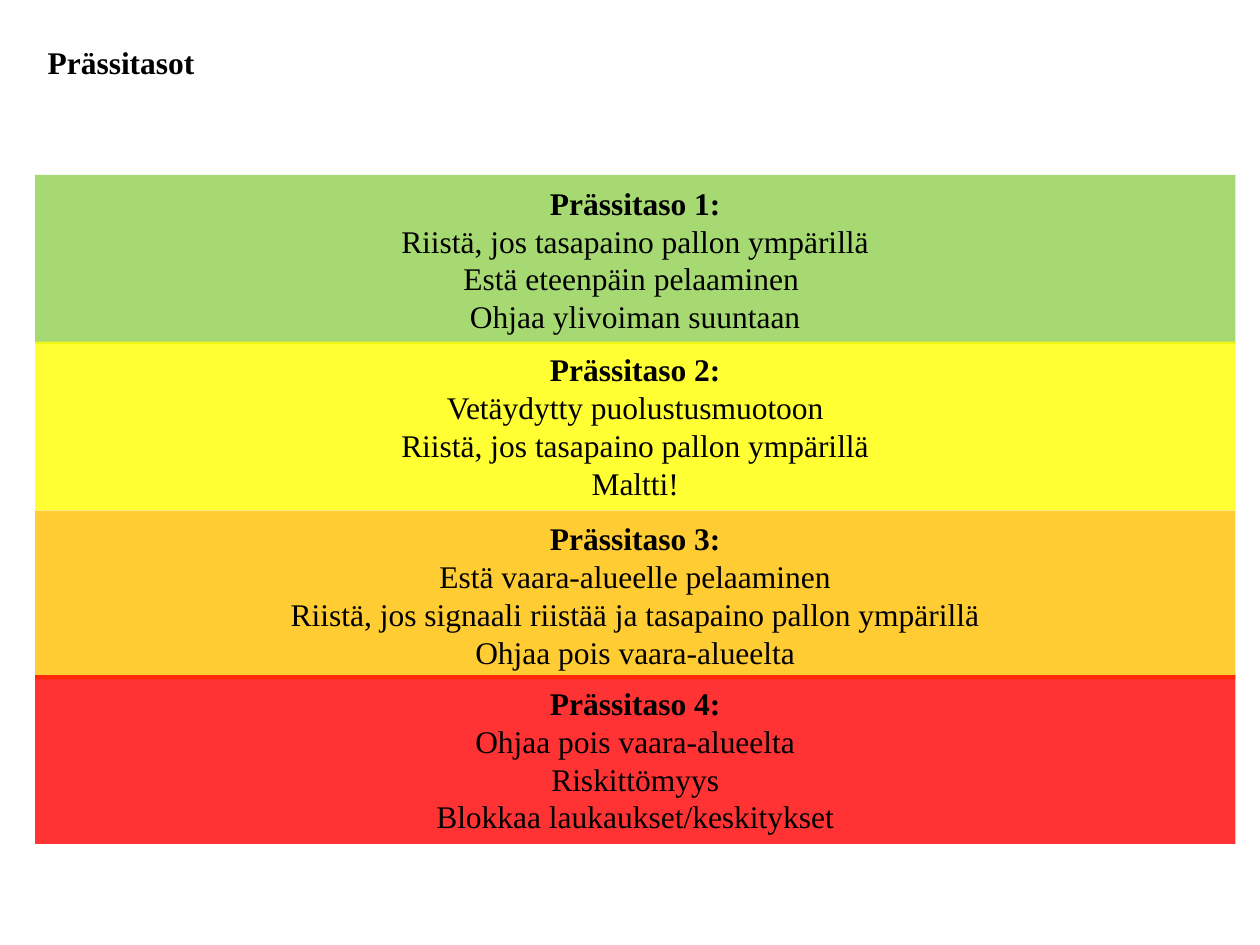
"""Build the slide of the four pressing levels."""
from dataclasses import dataclass

from lxml.etree import SubElement
from pptx import Presentation
from pptx.dml.color import RGBColor
from pptx.enum.shapes import MSO_SHAPE
from pptx.enum.text import MSO_ANCHOR, PP_ALIGN
from pptx.oxml.ns import qn
from pptx.slide import Slide
from pptx.text.text import TextFrame
from pptx.util import Pt

GREEN = RGBColor(0x92, 0xD0, 0x50)
YELLOW = RGBColor(0xFF, 0xFF, 0x00)
ORANGE = RGBColor(0xFF, 0xC0, 0x00)
RED = RGBColor(0xFF, 0x00, 0x00)
BLACK = RGBColor(0x00, 0x00, 0x00)

FONT = "Times New Roman"
LEFT = 20
BAND_WIDTH = 686
BAND_HEIGHT = 96.5
OPACITY = 80


@dataclass(frozen=True)
class Level:
    top: float
    color: RGBColor
    heading: str
    instructions: tuple[str, ...]


LEVELS = (
    Level(100, GREEN, "Prässitaso 1:", (
        "Riistä, jos tasapaino pallon ympärillä",
        "Estä eteenpäin pelaaminen ",
        "Ohjaa ylivoiman suuntaan",
    )),
    Level(195.2, YELLOW, "Prässitaso 2:", (
        "Vetäydytty puolustusmuotoon",
        "Riistä, jos tasapaino pallon ympärillä",
        "Maltti!",
    )),
    Level(291.8, ORANGE, "Prässitaso 3:", (
        "Estä vaara-alueelle pelaaminen",
        "Riistä, jos signaali riistää ja tasapaino pallon ympärillä",
        "Ohjaa pois vaara-alueelta",
    )),
    Level(385.8, RED, "Prässitaso 4:", (
        "Ohjaa pois vaara-alueelta",
        "Riskittömyys",
        "Blokkaa laukaukset/keskitykset",
    )),
)


def write_lines(frame: TextFrame, lines: tuple[str, ...], *,
                align: PP_ALIGN, anchor: MSO_ANCHOR, size: float = 18) -> None:
    """Write lines into a frame, the first one in bold."""
    frame.word_wrap = True
    frame.vertical_anchor = anchor
    for index, line in enumerate(lines):
        paragraph = frame.paragraphs[0] if index == 0 else frame.add_paragraph()
        paragraph.alignment = align
        paragraph.line_spacing = 1.0
        paragraph.space_before = Pt(0)
        run = paragraph.add_run()
        run.text = line
        run.font.name = FONT
        run.font.size = Pt(size)
        run.font.bold = index == 0
        run.font.color.rgb = BLACK


def add_title(slide: Slide, text: str) -> None:
    """Place the slide title in the top left corner."""
    title = slide.shapes.title
    title.left, title.top = Pt(LEFT), Pt(21)
    title.width, title.height = Pt(193), Pt(29)
    write_lines(title.text_frame, (text,), align=PP_ALIGN.LEFT, anchor=MSO_ANCHOR.TOP)


def add_level(slide: Slide, level: Level) -> None:
    """Draw one translucent band with its heading and instructions."""
    band = slide.shapes.add_shape(MSO_SHAPE.RECTANGLE, Pt(LEFT), Pt(level.top),
                                  Pt(BAND_WIDTH), Pt(BAND_HEIGHT))
    band.shadow.inherit = False
    band.line.fill.background()
    band.fill.solid()
    band.fill.fore_color.rgb = level.color
    fill_color = band.fill._xPr.find(qn("a:solidFill"))[0]
    SubElement(fill_color, qn("a:alpha"), val=str(OPACITY * 1000))
    write_lines(band.text_frame, (level.heading, *level.instructions),
                align=PP_ALIGN.CENTER, anchor=MSO_ANCHOR.MIDDLE)


def main() -> None:
    """Create the presentation and save it."""
    presentation = Presentation()
    presentation.slide_width, presentation.slide_height = Pt(720), Pt(540)
    slide = presentation.slides.add_slide(presentation.slide_layouts[5])
    add_title(slide, "Prässitasot")
    for level in LEVELS:
        add_level(slide, level)
    presentation.save("out.pptx")


if __name__ == "__main__":
    main()
